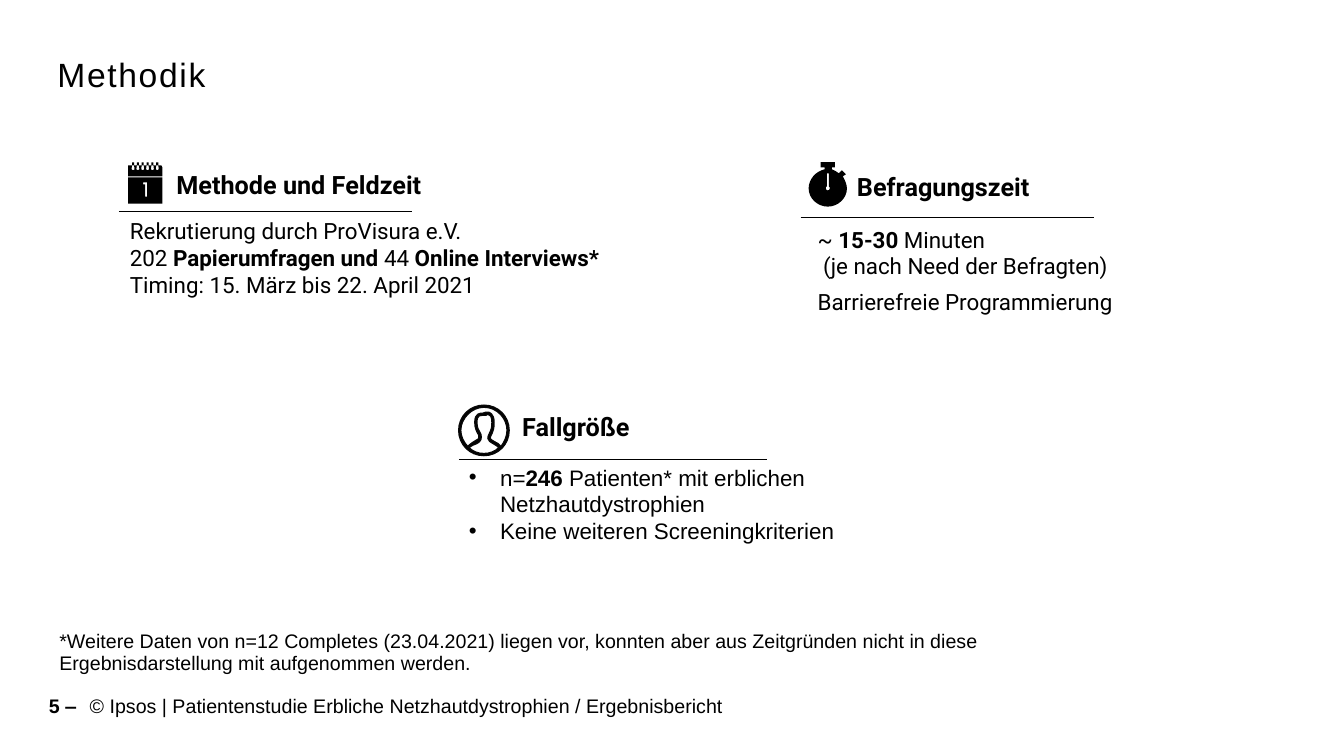
import pptx
import pptx.dml.color
import pptx.enum.shapes
import pptx.enum.text
import pptx.oxml.ns
import pptx.util
from lxml import etree

Inches, Pt = pptx.util.Inches, pptx.util.Pt
qn = pptx.oxml.ns.qn
ANCHOR = pptx.enum.text.MSO_ANCHOR
ALIGN = pptx.enum.text.PP_ALIGN
BLACK = "000000"

# Content: a paragraph is a list of (text, bold) runs
TITLE = [[("Methodik", False)]]
HEADINGS = [  # text, left, top
    ("Methode und Feldzeit", 1.75, 1.68),
    ("Befragungszeit", 8.5, 1.7),
    ("Fallgröße", 5.18, 4.08),
]
RULES = [(1.18, 4.09, 2.1), (7.94, 10.85, 2.16), (4.55, 7.61, 4.56)]  # from x, to x, y
METHOD = [
    [("Rekrutierung durch ProVisura e.V.", False)],
    [("202 ", False), ("Papierumfragen und ", True), ("44 ", False), ("Online Interviews*", True)],
    [("Timing: 15. März bis 22. April 2021", False)],
]
DURATION = [
    [("~ ", False), ("15-30", True), (" Minuten\v (je nach Need der Befragten)", False)],
    [("Barrierefreie Programmierung", False)],
]
SAMPLE = [
    [("n=", False), ("246 ", True), ("Patienten* mit erblichen Netzhautdystrophien", False)],
    [("Keine weiteren Screeningkriterien", False)],
]
FOOTNOTE = [[("*Weitere Daten von n=12 Completes (23.04.2021) liegen vor, konnten aber aus "
              "Zeitgründen nicht in diese Ergebnisdarstellung mit aufgenommen werden.", False)]]
FOOTER = [[("© Ipsos | Patientenstudie Erbliche Netzhautdystrophien / Ergebnisbericht", False)]]
PAGE = [[("5 ‒ ", True)]]

# Icon outlines: a start point, then line ends (x, y) or curves (x1, y1, x2, y2, x, y)
WATCH = [
    (8.28, 1.61), (8.28, 1.66), (8.25, 1.66), (8.25, 1.68), (8.27, 1.69, 8.3, 1.7, 8.32, 1.72),
    (8.35, 1.69), (8.39, 1.73), (8.36, 1.75), (8.38, 1.79, 8.4, 1.83, 8.4, 1.87),
    (8.4, 1.97, 8.31, 2.05, 8.21, 2.05), (8.11, 2.05, 8.02, 1.97, 8.02, 1.87),
    (8.02, 1.78, 8.09, 1.7, 8.18, 1.68), (8.18, 1.66), (8.14, 1.66), (8.14, 1.61),
]
HAND = [
    (8.22, 1.85), (8.22, 1.72), (8.2, 1.72), (8.2, 1.85), (8.19, 1.85, 8.19, 1.86, 8.19, 1.87),
    (8.19, 1.88, 8.2, 1.89, 8.21, 1.89), (8.22, 1.89, 8.23, 1.88, 8.23, 1.87),
    (8.23, 1.86, 8.23, 1.85, 8.22, 1.85),
]
BADGE = [
    (4.8, 4.02), (4.66, 4.02, 4.55, 4.13, 4.55, 4.27), (4.55, 4.41, 4.66, 4.52, 4.8, 4.52),
    (4.94, 4.52, 5.05, 4.41, 5.05, 4.27), (5.05, 4.13, 4.94, 4.02, 4.8, 4.02),
]
BACKDROP = [
    (4.97, 4.43), (4.95, 4.41, 4.93, 4.39, 4.9, 4.38), (4.88, 4.37, 4.87, 4.36, 4.86, 4.35),
    (4.86, 4.34, 4.86, 4.33, 4.87, 4.32), (4.87, 4.31, 4.87, 4.31, 4.88, 4.3),
    (4.89, 4.27, 4.9, 4.26, 4.9, 4.19), (4.9, 4.1, 4.85, 4.09, 4.84, 4.09),
    (4.83, 4.09, 4.82, 4.09, 4.82, 4.09), (4.81, 4.1, 4.8, 4.1, 4.79, 4.1),
    (4.76, 4.1, 4.71, 4.1, 4.71, 4.19), (4.71, 4.25, 4.73, 4.28, 4.74, 4.3),
    (4.74, 4.31, 4.75, 4.31, 4.75, 4.32), (4.76, 4.34, 4.75, 4.36, 4.72, 4.37),
    (4.69, 4.39, 4.67, 4.4, 4.64, 4.43), (4.6, 4.39, 4.57, 4.33, 4.57, 4.27),
    (4.57, 4.15, 4.68, 4.04, 4.8, 4.04), (4.93, 4.04, 5.03, 4.15, 5.03, 4.27),
    (5.03, 4.33, 5, 4.39, 4.97, 4.43),
]
BUST = [
    (4.8, 4.5), (4.74, 4.5, 4.69, 4.48, 4.65, 4.44), (4.68, 4.42, 4.7, 4.41, 4.73, 4.4),
    (4.77, 4.38, 4.78, 4.35, 4.77, 4.31), (4.77, 4.3, 4.76, 4.3, 4.76, 4.29),
    (4.75, 4.27, 4.73, 4.25, 4.73, 4.19), (4.73, 4.12, 4.76, 4.12, 4.79, 4.12),
    (4.81, 4.12, 4.82, 4.12, 4.82, 4.12), (4.83, 4.11, 4.83, 4.11, 4.84, 4.11),
    (4.86, 4.11, 4.88, 4.13, 4.88, 4.19), (4.88, 4.25, 4.87, 4.27, 4.86, 4.29),
    (4.85, 4.3, 4.85, 4.3, 4.85, 4.31), (4.84, 4.33, 4.84, 4.34, 4.84, 4.35),
    (4.85, 4.37, 4.86, 4.39, 4.89, 4.4), (4.91, 4.41, 4.94, 4.43, 4.95, 4.44),
    (4.91, 4.48, 4.86, 4.5, 4.8, 4.5),
]


def color(value):
    return pptx.dml.color.RGBColor.from_string(value)


def place(sp, x, y, w, h):
    sp.left, sp.top, sp.width, sp.height = map(Inches, (x, y, w, h))


def write(sp, paras, size, font="Arial", inset=(0.1, 0.05), anchor=ANCHOR.TOP,
          align=ALIGN.LEFT, spacing=1.0, gap=0, bullet=False):
    tf = sp.text_frame
    tf.word_wrap, tf.auto_size = True, pptx.enum.text.MSO_AUTO_SIZE.NONE
    tf.vertical_anchor = anchor
    tf.margin_left = tf.margin_right = Inches(inset[0])
    tf.margin_top = tf.margin_bottom = Inches(inset[1])
    for i, runs in enumerate(paras):
        p = tf.paragraphs[0] if i == 0 else tf.add_paragraph()
        p.alignment, p.line_spacing = align, spacing
        p.space_before, p.space_after = Pt(gap if i else 0), Pt(0)
        if bullet:
            pPr = p._p.get_or_add_pPr()
            pPr.set("marL", str(Inches(0.31)))
            pPr.set("indent", str(-Inches(0.31)))
            etree.SubElement(pPr, qn("a:buChar"), char="•")
        for text, bold in runs:
            for j, line in enumerate(text.split("\v")):
                if j:
                    p.add_line_break()
                r = p.add_run()
                r.text = line
                r.font.name, r.font.size, r.font.bold = font, Pt(size), bold
                r.font.color.rgb = color(BLACK)


def text_box(box, paras, size, **style):
    write(slide.shapes.add_textbox(*map(Inches, box)), paras, size, **style)


def rect(x1, y1, x2, y2):
    return [(x1, y1), (x2, y1), (x2, y2), (x1, y2)]


def icon(contours, outline=None):
    """One filled shape; contours inside another contour are holes."""
    builder = None
    for contour in contours:
        points = [(Inches(seg[i]), Inches(seg[i + 1]))
                  for seg in contour for i in range(0, len(seg), 2)]
        if builder is None:
            builder = slide.shapes.build_freeform(*points[0], scale=1.0)
        else:
            builder.move_to(*points[0])
        builder.add_line_segments(points[1:], close=False)
    sp = builder.convert_to_shape()

    # Join the three points of each curve
    steps = iter(list(sp._element.iter(qn("a:lnTo"))))
    for contour in contours:
        for seg in contour[1:]:
            step = next(steps)
            if len(seg) == 6:
                curve = etree.Element(qn("a:cubicBezTo"))
                step.addprevious(curve)
                for part in (step, next(steps), next(steps)):
                    curve.append(part[0])
                    part.getparent().remove(part)
        last = curve if len(seg) == 6 else step
        last.addnext(etree.Element(qn("a:close")))

    sp.shadow.inherit = False
    sp.fill.solid()
    sp.fill.fore_color.rgb = color(BLACK)
    if outline:
        sp.line.color.rgb, sp.line.width = color(outline), Pt(1)
    else:
        sp.line.fill.background()


prs = pptx.Presentation()
prs.slide_width, prs.slide_height = Inches(13.33), Inches(7.5)
slide = prs.slides.add_slide(prs.slide_layouts[1])

# Title
title = slide.shapes.title
place(title, 0.49, 0.53, 12.35, 0.46)
write(title, TITLE, 24, inset=(0.08, 0.05), spacing=0.9)
title.text_frame.paragraphs[0].runs[0].font._element.set("spc", "120")

# Headings and the rules below them
for text, x, y in HEADINGS:
    text_box((x, y, 4.2, 0.3), [[(text, True)]], 18, font="Roboto", inset=(0, 0))
for x1, x2, y in RULES:
    rule = slide.shapes.add_connector(pptx.enum.shapes.MSO_CONNECTOR.STRAIGHT,
                                      Inches(x1), Inches(y), Inches(x2), Inches(y))
    rule.line.color.rgb, rule.line.width = color(BLACK), Pt(0.5)
    etree.SubElement(rule._element.spPr, qn("a:effectLst"))

# Section texts
text_box((1.19, 2.11, 4.88, 1.17), METHOD, 16, font="Roboto", inset=(0.1, 0.05))
text_box((8.02, 2.19, 3.57, 0.8), DURATION, 16, font="Roboto", inset=(0.09, 0.05), gap=6)
body = slide.placeholders[1]
place(body, 4.55, 4.55, 4.28, 0.91)
write(body, SAMPLE, 16, bullet=True)

# Calendar icon: head with six rings, sheet, figure 1
rings = [1.32 + 0.048 * i for i in range(6)]
head = [(1.27, 1.64)]
for x in rings:
    head += [(x - 0.01, 1.64), (x - 0.01, 1.61), (x + 0.01, 1.61), (x + 0.01, 1.64)]
head += [(1.6, 1.64), (1.61, 1.66), (1.61, 1.75), (1.27, 1.75)]
holes = [[(x - 0.01, 1.64), (x + 0.01, 1.64), (x + 0.015, 1.68), (x, 1.69), (x - 0.015, 1.68)]
         for x in rings]
one = [(1.42, 1.81), (1.46, 1.81), (1.46, 1.95), (1.44, 1.95), (1.44, 1.83), (1.42, 1.83)]
icon([head, rect(1.27, 1.76, 1.61, 2.02), one] + holes)

# Stopwatch and person icons
icon([WATCH, HAND])
icon([BADGE, BACKDROP, BUST], outline="080808")

# Footnote, footer and page number
text_box((0.49, 6.22, 9.83, 0.53), FOOTNOTE, 14, spacing=0.9)
text_box((0.89, 6.8, 11.43, 0.4), FOOTER, 14, inset=(0, 0.05), anchor=ANCHOR.MIDDLE)
text_box((0.42, 6.8, 0.39, 0.4), PAGE, 14, inset=(0, 0.05), anchor=ANCHOR.MIDDLE,
         align=ALIGN.RIGHT)

prs.save("out.pptx")
